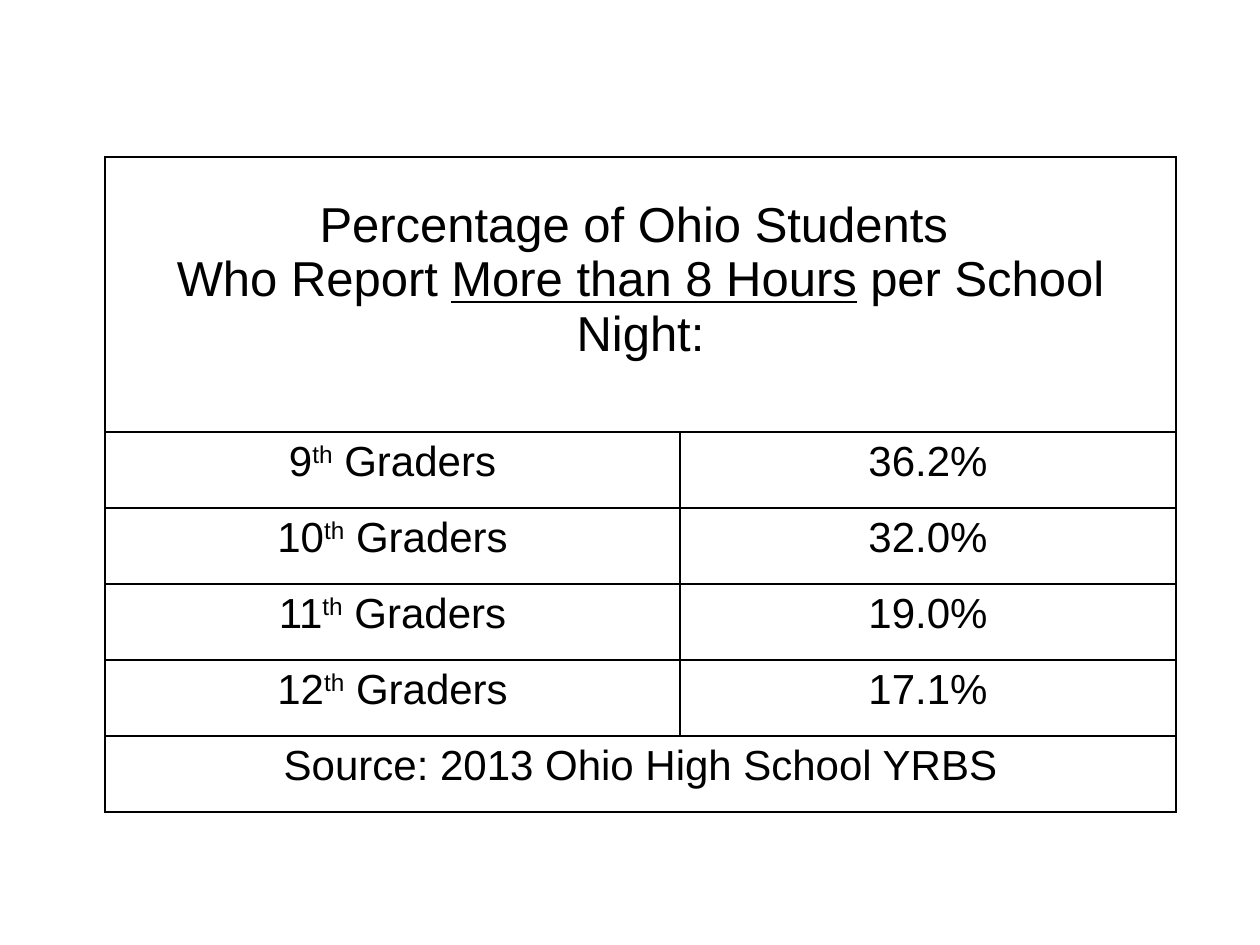
"""Build a slide with a table of Ohio students' sleep by grade."""
from lxml import etree
from pptx import Presentation, util as u
from pptx.dml.color import RGBColor
from pptx.enum import text
from pptx.oxml.ns import qn

HEADING = [
    [("Percentage of Ohio Students ", "")],
    [("Who Report ", ""), ("More than 8 Hours", "underline"), (" per School Night:", "")],
]
GRADES = [("9", "36.2%"), ("10", "32.0%"), ("11", "19.0%"), ("12", "17.1%")]
SOURCE = "Source: 2013 Ohio High School YRBS"

BLACK = RGBColor(0, 0, 0)
FONT = "Arial"
PX = u.Inches(1) // 126
LEFT, TOP = 105, 157
COLS = [575, 496]
ROWS = [275] + [76] * (len(GRADES) + 1)
HEADING_MARGIN = 41


def fill_cell(cell, paragraphs, size):
    tf = cell.text_frame
    for i, runs in enumerate(paragraphs):
        p = tf.add_paragraph() if i else tf.paragraphs[0]
        p.alignment = text.PP_ALIGN.CENTER
        for words, style in runs:
            r = p.add_run()
            r.text = words
            r.font.name, r.font.size = FONT, u.Pt(size)
            r.font.color.rgb = BLACK
            if style == "underline":
                r.font.underline = True
            elif style == "superscript":
                r._r.get_or_add_rPr().set("baseline", "30000")


def add_borders(cell):
    tcPr = cell._tc.get_or_add_tcPr()
    for i, side in enumerate(("lnL", "lnR", "lnT", "lnB")):
        ln = etree.Element(qn(f"a:{side}"), w=str(u.Pt(1)))
        fill = etree.SubElement(ln, qn("a:solidFill"))
        etree.SubElement(fill, qn("a:srgbClr"), val=str(BLACK))
        tcPr.insert(i, ln)


def main():
    prs = Presentation()
    prs.slide_width, prs.slide_height = u.Inches(10), u.Inches(7.5)
    s = prs.slides.add_slide(prs.slide_layouts[6])
    table = s.shapes.add_table(len(ROWS), len(COLS), LEFT * PX, TOP * PX,
                               sum(COLS) * PX, sum(ROWS) * PX).table
    table.first_row = table.horz_banding = False
    for col, width in zip(table.columns, COLS):
        col.width = width * PX
    for row, height in zip(table.rows, ROWS):
        row.height = height * PX
    for cell in table.iter_cells():
        cell.fill.background()
        add_borders(cell)

    last = len(ROWS) - 1
    for i in (0, last):
        table.cell(i, 0).merge(table.cell(i, 1))
    table.cell(0, 0).margin_top = HEADING_MARGIN * PX
    fill_cell(table.cell(0, 0), HEADING, 28)
    for i, (grade, share) in enumerate(GRADES, 1):
        label = [(grade, ""), ("th", "superscript"), (" Graders", "")]
        fill_cell(table.cell(i, 0), [label], 24)
        fill_cell(table.cell(i, 1), [[(share, "")]], 24)
    fill_cell(table.cell(last, 0), [[(SOURCE, "")]], 24)
    prs.save("out.pptx")


if __name__ == "__main__":
    main()
